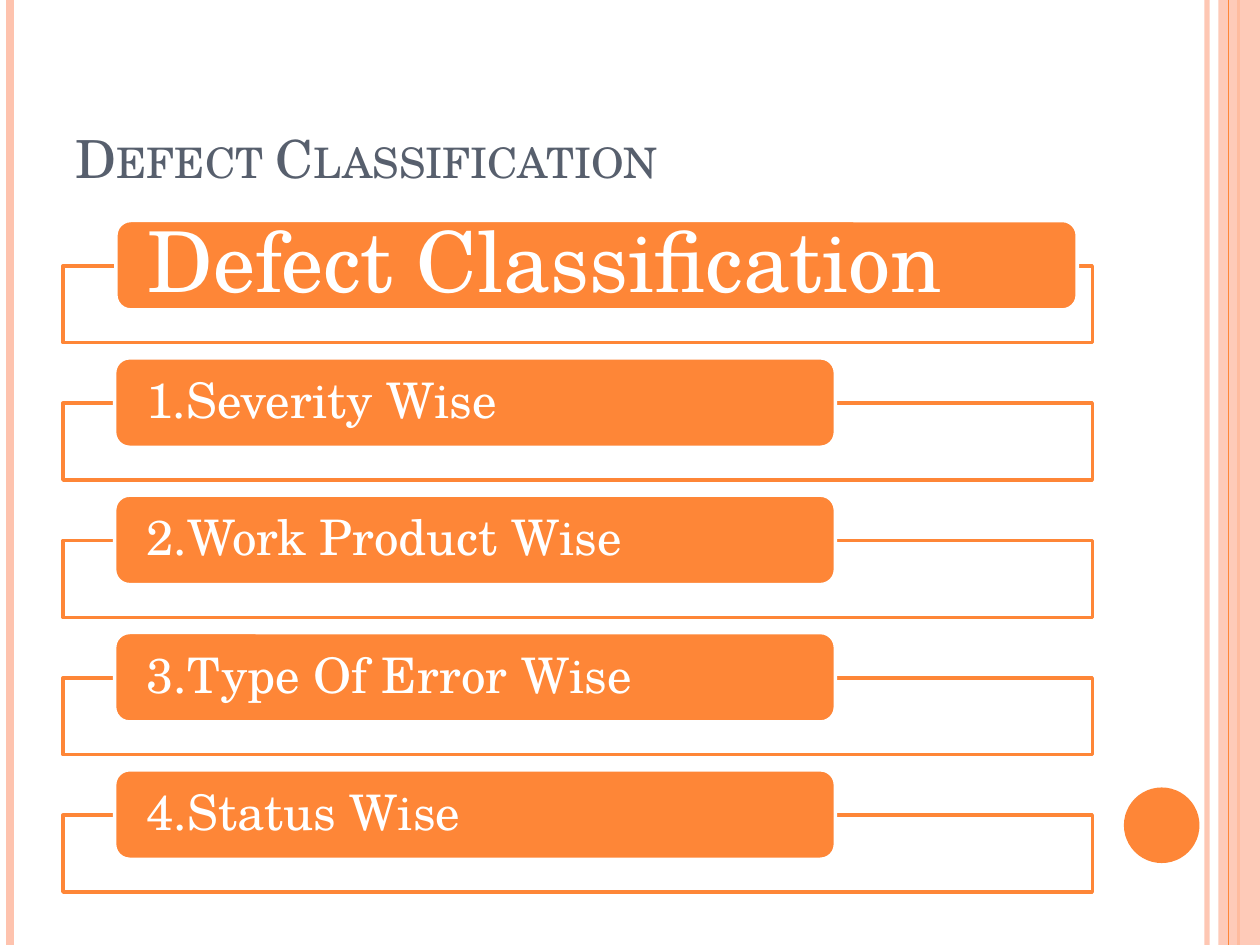
from pptx import Presentation
from pptx.dml.color import RGBColor as RGB
from pptx.enum.shapes import MSO_CONNECTOR as Link, MSO_SHAPE as Kind
from pptx.enum.text import MSO_ANCHOR as Anchor, PP_ALIGN as Align
from pptx.oxml.ns import qn
from pptx.util import Inches, Pt
from lxml.etree import SubElement

FONT = "TeX Gyre Schola"
ORANGE, PEACH, WHITE, SLATE = "FE8637", "FEC3AE", "FFFFFF", "575F6D"
ROWS = ["1.Severity Wise", "2.Work Product Wise", "3.Type Of Error Wise", "4.Status Wise"]
STEP = 1.09


def paint(fill, color, alpha=100):
    fill.solid()
    fill.fore_color.rgb = RGB.from_string(color)
    if alpha < 100:
        node = fill._xPr.find(qn("a:solidFill"))[0]
        SubElement(node, qn("a:alpha")).set("val", str(alpha * 1000))


def add_rule(shapes, x, color, width, alpha=100):
    rule = shapes.add_connector(Link.STRAIGHT, Inches(x), 0, Inches(x), Inches(7.5))
    rule.line.width = Pt(width)
    paint(rule.line.fill, color, alpha)
    SubElement(rule._element.spPr, qn("a:effectLst"))


def add_box(shapes, kind, box, color, alpha=100, edge=None):
    shape = shapes.add_shape(kind, *map(Inches, box))
    shape.shadow.inherit = False
    paint(shape.fill, color, alpha)
    if edge:
        shape.line.width = Pt(2)
        paint(shape.line.fill, edge)
    else:
        shape.line.fill.background()
    return shape


def add_run(frame, text, size, color):
    par = frame.paragraphs[0]
    par.alignment = Align.LEFT
    run = par.add_run()
    run.text = text
    run.font.name = FONT
    run.font.size = Pt(size)
    run.font.color.rgb = RGB.from_string(color)
    return run


def add_frame(shapes):
    add_rule(shapes, 9.58, PEACH, 3, 93)
    add_rule(shapes, 0.08, PEACH, 4.5)
    add_rule(shapes, 9.83, ORANGE, 1.5)
    add_box(shapes, Kind.RECTANGLE, (9.67, 0, 0.33, 7.5), PEACH, 87)
    add_rule(shapes, 9.75, ORANGE, 0.75)
    add_box(shapes, Kind.OVAL, (8.92, 6.25, 0.6, 0.6), ORANGE)


def set_title(title, text):
    title.left, title.top, title.width, title.height = map(Inches, (0.5, 0.3, 8.17, 1.25))
    frame = title.text_frame
    frame.word_wrap = True
    frame.vertical_anchor = Anchor.BOTTOM
    run = add_run(frame, text, 30, SLATE)
    run._r.get_or_add_rPr().set("cap", "small")


def add_row(shapes, index, text, left, width, size):
    top = 1.75 + STEP * index
    add_box(shapes, Kind.RECTANGLE, (0.5, top + 0.36, 8.17, 0.61), WHITE, 90, ORANGE)
    bar = add_box(shapes, Kind.ROUNDED_RECTANGLE, (left, top, width, 0.71), ORANGE, edge=WHITE)
    frame = bar.text_frame
    frame.word_wrap = True
    frame.vertical_anchor = Anchor.MIDDLE
    frame.margin_left = frame.margin_right = Inches(0.22)
    frame.margin_top = frame.margin_bottom = 0
    frame.paragraphs[0].line_spacing = 0.9
    add_run(frame, text, size, WHITE)


def main():
    deck = Presentation()
    deck.slide_width, deck.slide_height = Inches(10), Inches(7.5)
    slide = deck.slides.add_slide(deck.slide_layouts[5])
    add_frame(slide.shapes)
    set_title(slide.shapes.title, "Defect Classification")
    group = slide.shapes.add_group_shape()
    add_row(group.shapes, 0, "Defect Classification", 0.92, 7.63, 48)
    for index, text in enumerate(ROWS, 1):
        add_row(group.shapes, index, text, 0.91, 5.72, 28)
    deck.save("out.pptx")


if __name__ == "__main__":
    main()
